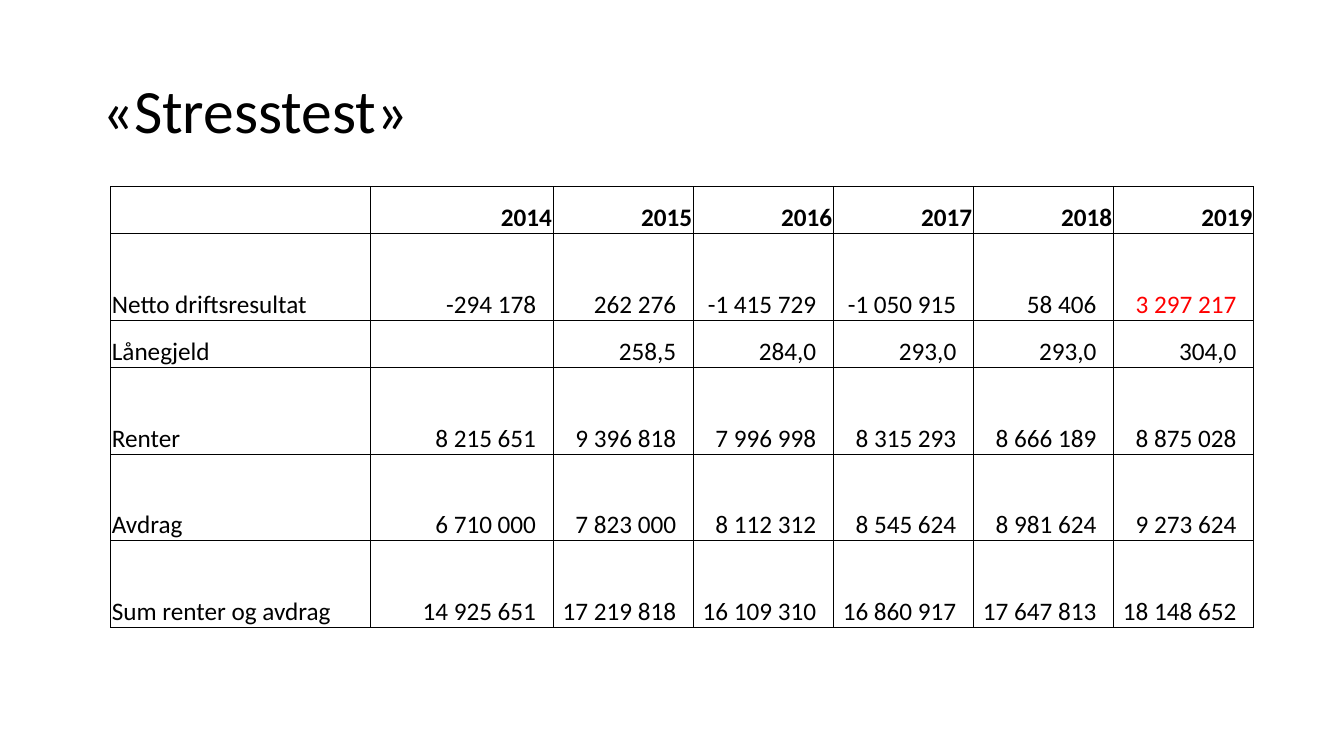
from lxml import etree
from pptx import Presentation
from pptx.dml.color import RGBColor
from pptx.enum.text import MSO_ANCHOR, PP_ALIGN
from pptx.oxml.ns import qn
from pptx.util import Cm, Pt

LEFT, RIGHT = PP_ALIGN.LEFT, PP_ALIGN.RIGHT
MIDDLE, BOTTOM = MSO_ANCHOR.MIDDLE, MSO_ANCHOR.BOTTOM

TITLE = "«Stresstest»"
ROWS = [
    ("", "2014", "2015", "2016", "2017", "2018", "2019"),
    ("Netto driftsresultat", "-294 178", "262 276", "-1 415 729", "-1 050 915", "58 406", "3 297 217"),
    ("Lånegjeld", "", "258,5", "284,0", "293,0", "293,0", "304,0"),
    ("Renter", "8 215 651", "9 396 818", "7 996 998", "8 315 293", "8 666 189", "8 875 028"),
    ("Avdrag", "6 710 000", "7 823 000", "8 112 312", "8 545 624", "8 981 624", "9 273 624"),
    ("Sum renter og avdrag", "14 925 651", "17 219 818", "16 109 310", "16 860 917", "17 647 813", "18 148 652"),
]
HIGHLIGHT = (1, 6)
SHORT, TALL = 1.19, 2.18
COL_WIDTHS = [6.53, 4.62] + [3.53] * 5
ROW_HEIGHTS = [SHORT, TALL, SHORT, TALL, TALL, TALL]
EDGE, NUMBER_INSET = 0.03, 0.43


def rgb(value):
    return RGBColor.from_string(value)


def style(p, size, color="000000", bold=False, align=LEFT):
    p.alignment = align
    for r in p.runs:
        r.font.name = "Calibri"
        r.font.size = Pt(size)
        r.font.bold = bold
        r.font.color.rgb = rgb(color)


def add_borders(cell):
    tc_pr = cell._tc.get_or_add_tcPr()
    for i, side in enumerate(("a:lnL", "a:lnR", "a:lnT", "a:lnB")):
        ln = etree.Element(qn(side), w=str(Pt(0.5)))
        fill = etree.SubElement(ln, qn("a:solidFill"))
        etree.SubElement(fill, qn("a:srgbClr"), val="000000")
        tc_pr.insert(i, ln)


def fill_cell(cell, text, row, col):
    header, number = row == 0, row > 0 and col > 0
    cell.text_frame.text = text
    cell.vertical_anchor = BOTTOM
    cell.margin_left = cell.margin_top = Cm(EDGE)
    cell.margin_right = Cm(NUMBER_INSET if number else EDGE)
    cell.margin_bottom = 0
    cell.fill.background()
    add_borders(cell)
    color = "FF0000" if (row, col) == HIGHLIGHT else "000000"
    p = cell.text_frame.paragraphs[0]
    p.font.size = Pt(18)
    style(p, 18, color, header, RIGHT if col else LEFT)


def main():
    prs = Presentation()
    prs.slide_width, prs.slide_height = Cm(33.87), Cm(19.05)
    slide = prs.slides.add_slide(prs.slide_layouts[5])

    title = slide.shapes.title
    title.left, title.top, title.width, title.height = Cm(2.33), Cm(1.01), Cm(29.21), Cm(3.68)
    tf = title.text_frame
    tf.text = TITLE
    tf.vertical_anchor = MIDDLE
    tf.paragraphs[0].line_spacing = 0.9
    style(tf.paragraphs[0], 44)

    frame = slide.shapes.add_table(
        len(ROWS), len(COL_WIDTHS), Cm(2.79), Cm(4.7),
        Cm(sum(COL_WIDTHS)), Cm(sum(ROW_HEIGHTS)))
    table = frame.table
    table.first_row = table.horz_banding = False
    for column, width in zip(table.columns, COL_WIDTHS):
        column.width = Cm(width)
    for i, (values, height) in enumerate(zip(ROWS, ROW_HEIGHTS)):
        table.rows[i].height = Cm(height)
        for j, text in enumerate(values):
            fill_cell(table.cell(i, j), text, i, j)

    prs.save("out.pptx")


if __name__ == "__main__":
    main()
